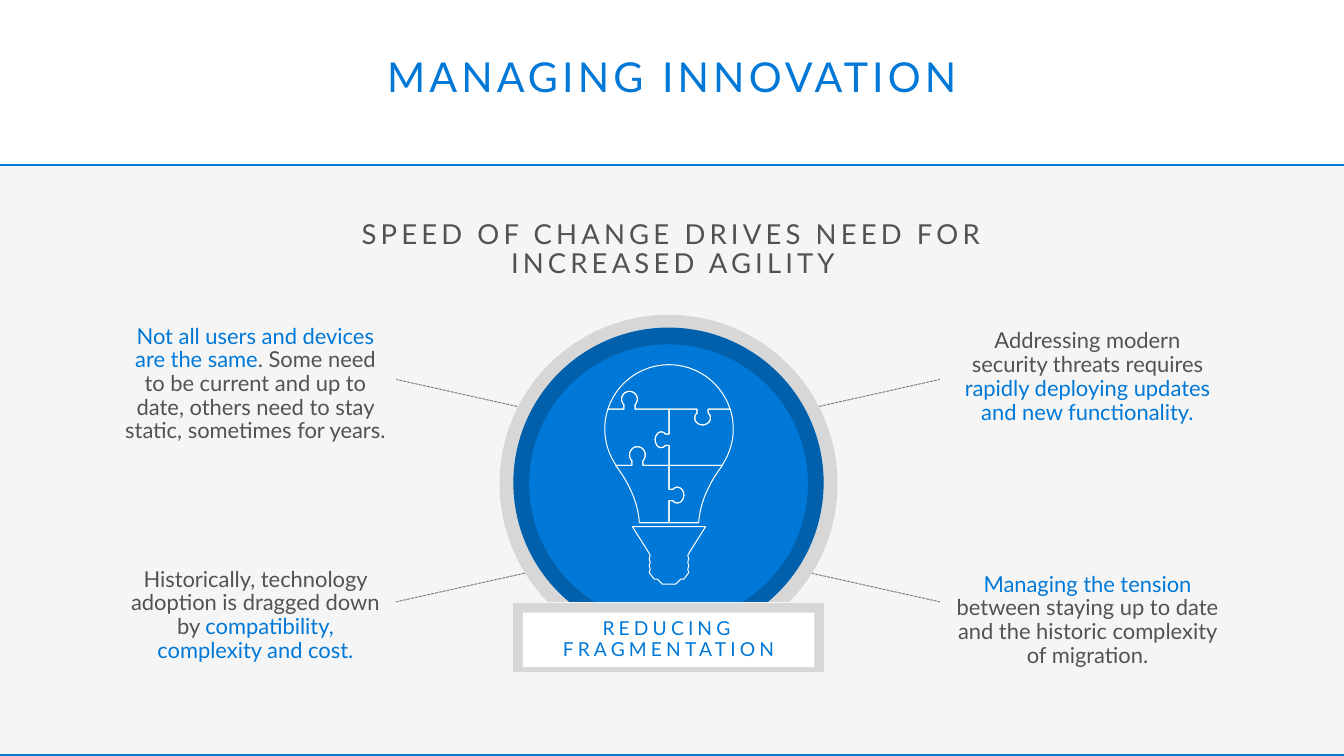
import math

import pptx
import pptx.util
import pptx.dml.color
import pptx.enum.dml
import pptx.enum.shapes
import pptx.enum.text
import pptx.oxml

Inches = pptx.util.Inches
Pt = pptx.util.Pt
RGBColor = pptx.dml.color.RGBColor
SHAPE = pptx.enum.shapes.MSO_SHAPE
ANCHOR = pptx.enum.text.MSO_ANCHOR

BLUE = RGBColor(0x00, 0x78, 0xD7)
NAVY = RGBColor(0x00, 0x60, 0xAC)
INK = RGBColor(0x52, 0x52, 0x52)
DASH = RGBColor(0x80, 0x80, 0x80)
SILVER = RGBColor(0xD7, 0xD7, 0xD7)
MIST = RGBColor(0xF5, 0xF5, 0xF5)
WHITE = RGBColor(0xFF, 0xFF, 0xFF)

WIDTH, HEIGHT = 13.6, 7.65
FONT = "Lato"
TITLE = "MANAGING INNOVATION"
SUBTITLE = "SPEED OF CHANGE DRIVES NEED FOR INCREASED AGILITY"
PLAQUE = "REDUCING FRAGMENTATION"

CALLOUTS = [
    (1.08, 3.19, [("Not all users and devices are the same", BLUE),
                  (". Some need to be current and up to date, others need to stay static, "
                   "sometimes for years.", INK)]),
    (1.08, 5.65, [("Historically, technology adoption is dragged down by ", INK),
                  ("compatibility, complexity and cost.", BLUE)]),
    (9.5, 3.24, [("Addressing modern security threats requires ", INK),
                 ("rapidly deploying updates and new functionality.", BLUE)]),
    (9.5, 5.7, [("Managing the tension ", BLUE),
                ("between staying up to date and the historic complexity of migration.", INK)]),
]
LEADERS = [(inner, outer, near, far) for inner, outer in ((5.31, 4.01), (8.21, 9.51))
           for near, far in ((4.13, 3.84), (5.8, 6.09))]
DISCS = [(5.06, 3.19, 3.41, SILVER), (5.2, 3.32, 3.13, NAVY), (5.36, 3.49, 2.81, BLUE)]

AXIS, GLOBE_Y, RADIUS = 6.77, 4.34, 0.65
BROW, WAIST, HEM = 4.14, 4.71, 5.29
LEFT, RIGHT = -1, 1


def arc(start, end, steps=24):
    """Return points on the globe between two angles."""
    angles = [start + (end - start) * index / steps for index in range(steps + 1)]
    return [(AXIS + RADIUS * math.cos(a), GLOBE_Y + RADIUS * math.sin(a)) for a in angles]


def knob(center, depth, steps=16):
    """Return a round puzzle knob as distances along and away from its seam."""
    angles = [math.radians(225 - 270 * index / steps) for index in range(steps + 1)]
    curve = [(center + 0.08 * math.cos(a), depth * (0.56 + 0.44 * math.sin(a))) for a in angles]
    return [(curve[0][0], 0)] + curve + [(curve[-1][0], 0)]


def across(level, center, depth):
    """Return the knob of a level seam."""
    return [(along, level - away) for along, away in knob(center, depth)]


def down(center, depth):
    """Return the knob of an upright seam."""
    return [(AXIS + away, along) for along, away in knob(center, depth)]


def neck(side, steps=12):
    """Return the curve from the waist to the hem on one side."""
    reach, tuck, foot = 0.54, 0.32, 0.3
    points = []
    for index in range(steps + 1):
        t = index / steps
        spread = (1 - t) ** 2 * reach + 2 * t * (1 - t) * tuck + t * t * foot
        points.append((AXIS + side * spread, WAIST + t * (HEM - WAIST)))
    return points


def puzzle_pieces():
    """Return the closed outlines of the bulb."""
    high = math.asin((BROW - GLOBE_Y) / RADIUS)
    low = math.asin((WAIST - GLOBE_Y) / RADIUS)
    crown = arc(math.pi - high, 2 * math.pi + high)
    left_cheek = arc(math.pi - low, math.pi - high)
    right_cheek = arc(high, low)
    hub, core, base = (AXIS, BROW), (AXIS, WAIST), (AXIS, HEM)
    left_brow = across(BROW, 6.37, 0.18)
    right_brow = across(BROW, 7.11, -0.16)
    left_waist = across(WAIST, 6.45, 0.19)
    upper_seam = down(4.45, -0.14)
    lower_seam = down(5.01, 0.15)
    ripples = [(0.19 + 0.01 * (turn % 2), 5.62 + 0.035 * turn) for turn in range(6)]
    profile = [(0.37, 5.33), (0.2, 5.6)] + ripples + [(0.15, 5.86), (0.12, 5.86), (0.07, 5.91)]
    socket = [(AXIS + x, y) for x, y in profile] + [(AXIS - x, y) for x, y in profile[::-1]]
    return [
        left_cheek + left_brow + [hub] + upper_seam + [core] + left_waist[::-1],
        crown + right_brow[::-1] + [hub] + left_brow[::-1],
        [hub] + right_brow + right_cheek + [core] + upper_seam[::-1],
        neck(LEFT)[::-1] + left_waist + [core] + lower_seam + [base],
        [core] + neck(RIGHT) + [base] + lower_seam[::-1],
        socket,
    ]


def add_piece(shapes, points):
    """Draw one closed puzzle piece of the bulb."""
    outline = [(Inches(x), Inches(y)) for x, y in points]
    builder = shapes.build_freeform(*outline[0], scale=1.0)
    builder.add_line_segments(outline[1:], close=True)
    piece = builder.convert_to_shape()
    piece.shadow.inherit = False
    piece.fill.background()
    piece.line.color.rgb = WHITE
    piece.line.width = Pt(0.75)


def add_block(shapes, kind, place, fill, edge=None):
    """Draw a filled preset shape."""
    block = shapes.add_shape(kind, *map(Inches, place))
    block.shadow.inherit = False
    block.fill.solid()
    block.fill.fore_color.rgb = fill
    if edge is None:
        block.line.fill.background()
    else:
        block.line.color.rgb = edge
        block.line.width = Pt(0.75)
    return block


def write(box, spans, size, spacing=0, inset=(0.16, 0.1), anchor=ANCHOR.TOP):
    """Fill a box with one centred paragraph of coloured spans."""
    frame = box.text_frame
    frame.word_wrap = True
    frame.auto_size = pptx.enum.text.MSO_AUTO_SIZE.NONE
    frame.vertical_anchor = anchor
    frame.margin_left = frame.margin_right = Inches(inset[0])
    frame.margin_top = frame.margin_bottom = Inches(inset[1])
    para = frame.paragraphs[0]
    para.alignment = pptx.enum.text.PP_ALIGN.CENTER
    para.line_spacing = 0.9
    para.space_before = Pt(0)
    para.space_after = Pt(6)
    for text, color in spans:
        span = para.add_run()
        span.text = text
        span.font.name = FONT
        span.font.size = Pt(size)
        span.font.color.rgb = color
        if spacing:
            span.font._element.set("spc", str(spacing * 100))


def add_leader(shapes, inner, outer, near, far):
    """Draw a dashed line from the disc to a callout."""
    leader = shapes.add_connector(pptx.enum.shapes.MSO_CONNECTOR.STRAIGHT,
                                  *map(Inches, (inner, near, outer, far)))
    leader.line.color.rgb = DASH
    leader.line.width = Pt(0.75)
    leader.line.dash_style = pptx.enum.dml.MSO_LINE.SQUARE_DOT
    leader._element.spPr.append(pptx.oxml.parse_xml(
        '<a:effectLst xmlns:a="http://schemas.openxmlformats.org/drawingml/2006/main"/>'))


def main():
    """Build the slide and save the deck."""
    deck = pptx.Presentation()
    deck.slide_width, deck.slide_height = Inches(WIDTH), Inches(HEIGHT)
    page = deck.slides.add_slide(deck.slide_layouts[5])
    shapes = page.shapes
    title = shapes.title
    title.left, title.top, title.width, title.height = map(Inches, (3.48, 0.48, 6.64, 0.6))
    write(title, [(TITLE, BLUE)], 30, spacing=3)
    add_block(shapes, SHAPE.RECTANGLE, (0, 1.68, WIDTH, 5.97), MIST)
    for leader in LEADERS:
        add_leader(shapes, *leader)
    for left, top, spans in CALLOUTS:
        write(shapes.add_textbox(*map(Inches, (left, top, 3.01, 0.6))), spans, 16)
    for top in (1.66, 7.63):
        add_block(shapes, SHAPE.RECTANGLE, (0, top, WIDTH, 0.02), BLUE, BLUE)
    for left, top, size, color in DISCS:
        add_block(shapes, SHAPE.OVAL, (left, top, size, size), color, color)
    bulb = shapes.add_group_shape()
    for points in puzzle_pieces():
        add_piece(bulb.shapes, points)
    subtitle = shapes.add_textbox(*map(Inches, (2.81, 2.13, 8, 0.6)))
    write(subtitle, [(SUBTITLE, INK)], 20, spacing=3)
    plaque = shapes.add_group_shape()
    add_block(plaque.shapes, SHAPE.RECTANGLE, (5.19, 6.1, 3.15, 0.71), SILVER, MIST)
    label = add_block(plaque.shapes, SHAPE.RECTANGLE, (5.29, 6.2, 2.95, 0.55), WHITE)
    write(label, [(PLAQUE, BLUE)], 14, spacing=3, inset=(0.2, 0.2), anchor=ANCHOR.MIDDLE)
    deck.save("out.pptx")


if __name__ == "__main__":
    main()
